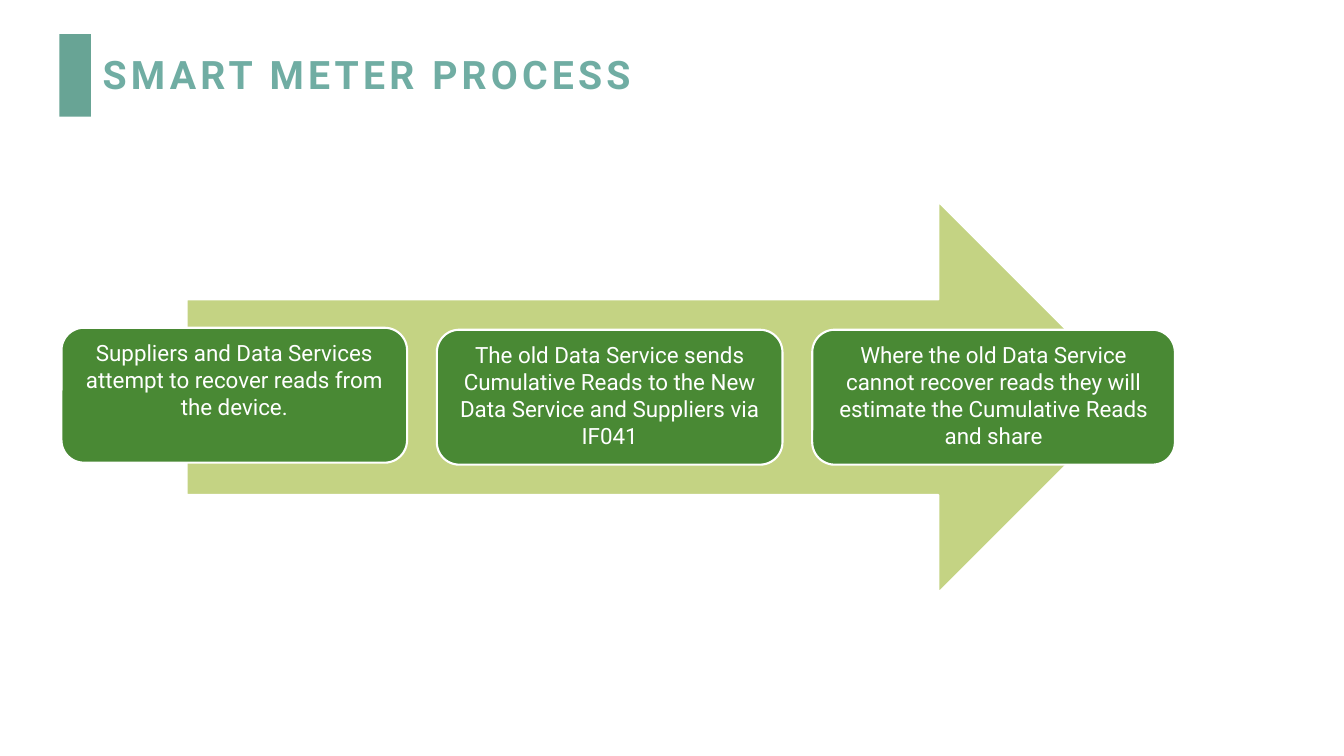
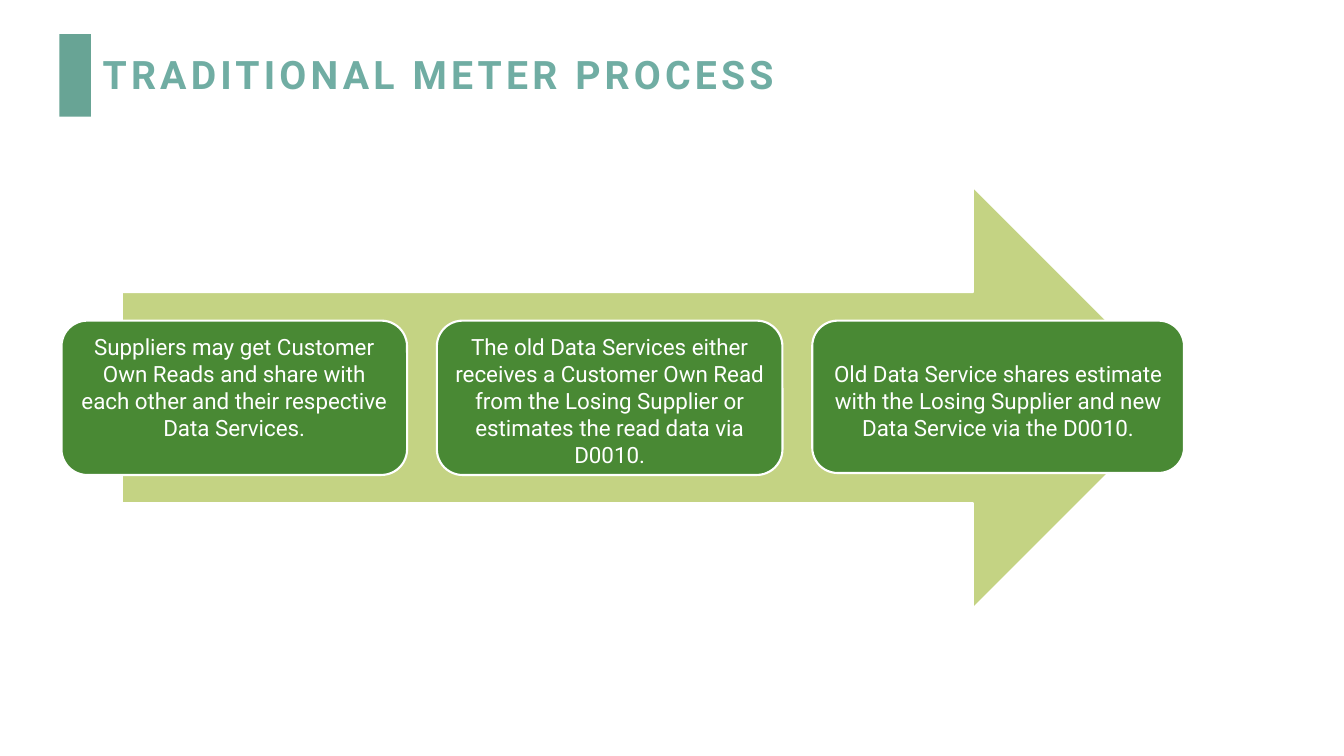
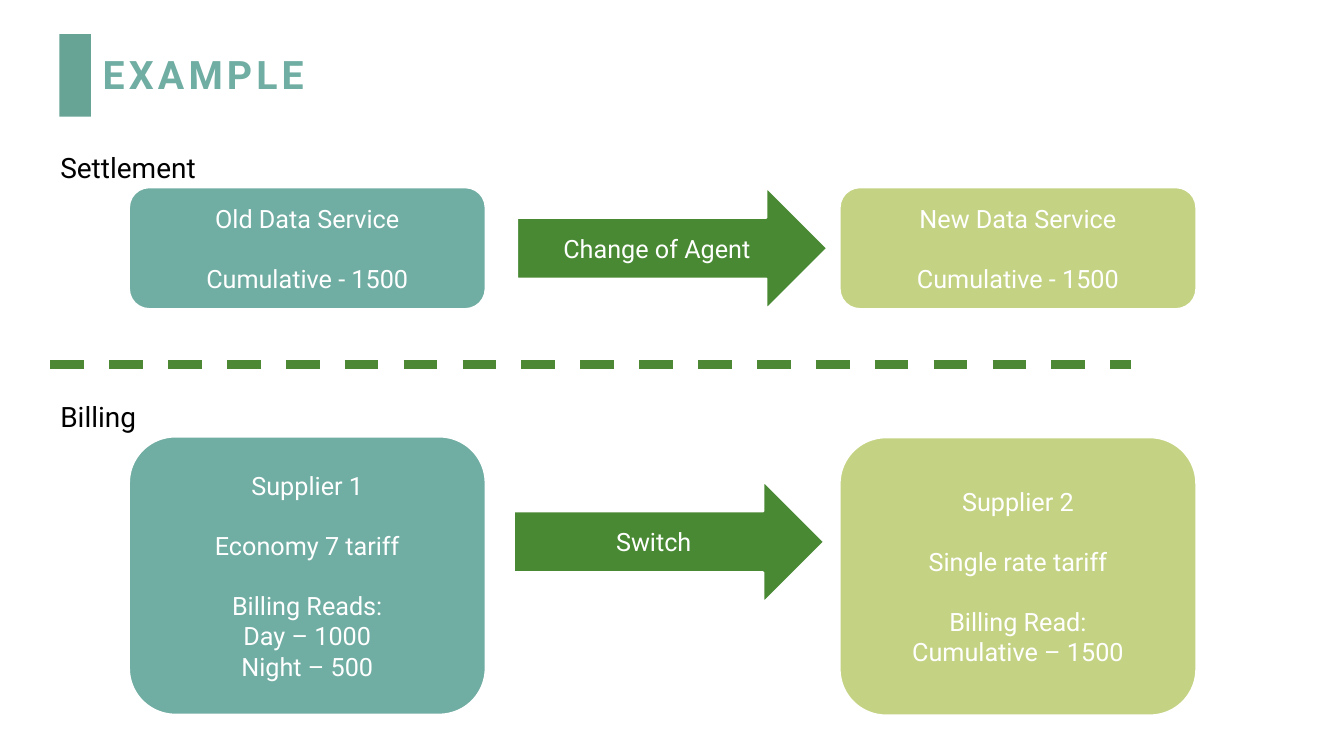
from lxml import etree
from pptx import Presentation
from pptx.dml.color import RGBColor
from pptx.enum.dml import MSO_LINE
from pptx.enum.shapes import MSO_CONNECTOR, MSO_SHAPE
from pptx.enum.text import MSO_ANCHOR, PP_ALIGN
from pptx.oxml.ns import qn
from pptx.util import Cm, Pt

RECTANGLE = MSO_SHAPE.RECTANGLE
ROUNDED = MSO_SHAPE.ROUNDED_RECTANGLE
ARROW = MSO_SHAPE.RIGHT_ARROW
STRAIGHT = MSO_CONNECTOR.STRAIGHT
DASH = MSO_LINE.DASH
TOP, MIDDLE = MSO_ANCHOR.TOP, MSO_ANCHOR.MIDDLE
LEFT, CENTER = PP_ALIGN.LEFT, PP_ALIGN.CENTER

FONT = "Roboto"
BAR, TEAL, LIME, GREEN = "68A495", "70ADA3", "C4D383", "498934"
DIVIDER, WHITE, BLACK = "4D8934", "FFFFFF", "000000"

STEP_LEFT, STEP_PITCH, STEP_WIDTH = 1.55, 9.46, 8.71
CARD_WIDTH = 8.99
OLD_LEFT, NEW_LEFT = 3.25, 21.16
GROUP_GAP = 21.5  # points between groups of lines in a card


def rgb(color):
    return RGBColor.from_string(color)


def write(shape, groups, size, color, align=CENTER, anchor=MIDDLE):
    """Write groups of lines, one paragraph a line, with a gap between groups."""
    frame = shape.text_frame
    frame.word_wrap = True
    frame.vertical_anchor = anchor
    paragraph = None
    for group in groups:
        for index, line in enumerate(group):
            starts_group = paragraph is not None and index == 0
            paragraph = frame.paragraphs[0] if paragraph is None else frame.add_paragraph()
            paragraph.text = line
            paragraph.alignment = align
            paragraph.font.name = FONT
            paragraph.font.size = Pt(size)
            paragraph.font.color.rgb = rgb(color)
            if starts_group:
                paragraph.space_before = Pt(GROUP_GAP)


def add_box(slide, kind, left, top, width, height, fill, outlined=True):
    shape = slide.shapes.add_shape(kind, Cm(left), Cm(top), Cm(width), Cm(height))
    shape.shadow.inherit = False
    shape.fill.solid()
    shape.fill.fore_color.rgb = rgb(fill)
    if outlined:
        shape.line.color.rgb = rgb(WHITE)
        shape.line.width = Pt(1.5)
    else:
        shape.line.fill.background()
    return shape


def add_label(slide, text, left, top, width, height, size, color, anchor=TOP):
    label = slide.shapes.add_textbox(Cm(left), Cm(top), Cm(width), Cm(height))
    write(label, [[text]], size, color, LEFT, anchor)
    return label.text_frame.paragraphs[0]


def add_titled_slide(presentation, title):
    slide = presentation.slides.add_slide(presentation.slide_layouts[6])
    add_box(slide, RECTANGLE, 1.5, 0.86, 0.79, 2.08, BAR, outlined=False)
    paragraph = add_label(slide, title, 2.34, 1.02, 25.78, 1.83, 28, TEAL, MIDDLE)
    paragraph.line_spacing = 0.9
    paragraph.font.bold = True
    paragraph.runs[0].font.bold = True
    paragraph.runs[0]._r.get_or_add_rPr().set("spc", "300")
    return slide


def add_step(slide, column, text, top, height, width=STEP_WIDTH, inset=0.13):
    left = STEP_LEFT + column * STEP_PITCH
    step = add_box(slide, ROUNDED, left, top, width, height, GREEN)
    step.text_frame.margin_top = Cm(inset)
    write(step, [[text]], 16, WHITE, anchor=TOP)


def add_card(slide, left, top, height, fill, groups):
    card = add_box(slide, ROUNDED, left, top, CARD_WIDTH, height, fill)
    write(card, groups, 18, WHITE)


def add_labelled_arrow(slide, left, top, text):
    arrow = add_box(slide, ARROW, left, top, 7.82, 3.07, GREEN)
    write(arrow, [[text]], 18, WHITE)


def add_divider(slide, left, right, y):
    divider = slide.shapes.add_connector(STRAIGHT, Cm(left), Cm(y), Cm(right), Cm(y))
    divider.line.color.rgb = rgb(DIVIDER)
    divider.line.width = Pt(6)
    divider.line.dash_style = DASH
    etree.SubElement(divider._element.spPr, qn("a:effectLst"))


def build_smart_meter(presentation):
    slide = add_titled_slide(presentation, "SMART METER PROCESS")
    add_box(slide, ARROW, 4.7, 5.08, 23.88, 9.86, LIME)
    add_step(slide, 0, "Suppliers and Data Services attempt to recover reads from the device.",
             8.26, 3.4)
    add_step(slide, 1, "The old Data Service sends Cumulative Reads to the New Data Service "
             "and Suppliers via IF041", 8.31, 3.4)
    add_step(slide, 2, "Where the old Data Service cannot recover reads they will estimate "
             "the Cumulative Reads and share", 8.31, 3.4, width=9.14)


def build_traditional_meter(presentation):
    slide = add_titled_slide(presentation, "TRADITIONAL METER PROCESS")
    add_box(slide, ARROW, 3.07, 4.7, 26.77, 10.64, LIME)
    add_step(slide, 0, "Suppliers may get Customer Own Reads and share with each other "
             "and their respective Data Services.", 8.08, 3.89)
    add_step(slide, 1, "The old Data Services either receives a Customer Own Read from the "
             "Losing Supplier or estimates the read data via D0010.", 8.08, 3.89)
    add_step(slide, 2, "Old Data Service shares estimate with the Losing Supplier and new "
             "Data Service via the D0010.", 8.08, 3.84, width=9.37, inset=0.81)


def build_example(presentation):
    slide = add_titled_slide(presentation, "EXAMPLE")
    for text, top in (("Settlement", 3.68), ("Billing", 9.93)):
        add_label(slide, text, 1.27, top, 3.96, 1.12, 20, BLACK)
    add_divider(slide, 1.27, 28.5, 9.19)

    for left, fill, name in ((OLD_LEFT, TEAL, "Old Data Service"),
                             (NEW_LEFT, LIME, "New Data Service")):
        add_card(slide, left, 4.72, 3.07, fill, [[name], ["Cumulative - 1500"]])
    add_labelled_arrow(slide, 13.03, 4.72, "Change of Agent")

    add_card(slide, OLD_LEFT, 11, 7.01, TEAL,
             [["Supplier 1"], ["Economy 7 tariff"],
              ["Billing Reads:", "Day – 1000", "Night – 500"]])
    add_card(slide, NEW_LEFT, 11.02, 7.01, LIME,
             [["Supplier 2"], ["Single rate tariff"],
              ["Billing Read:", "Cumulative – 1500"]])
    add_labelled_arrow(slide, 12.95, 12.12, "Switch")


def main():
    presentation = Presentation()
    presentation.slide_width = Cm(33.87)
    presentation.slide_height = Cm(19.05)
    build_smart_meter(presentation)
    build_traditional_meter(presentation)
    build_example(presentation)
    presentation.save("out.pptx")


if __name__ == "__main__":
    main()
